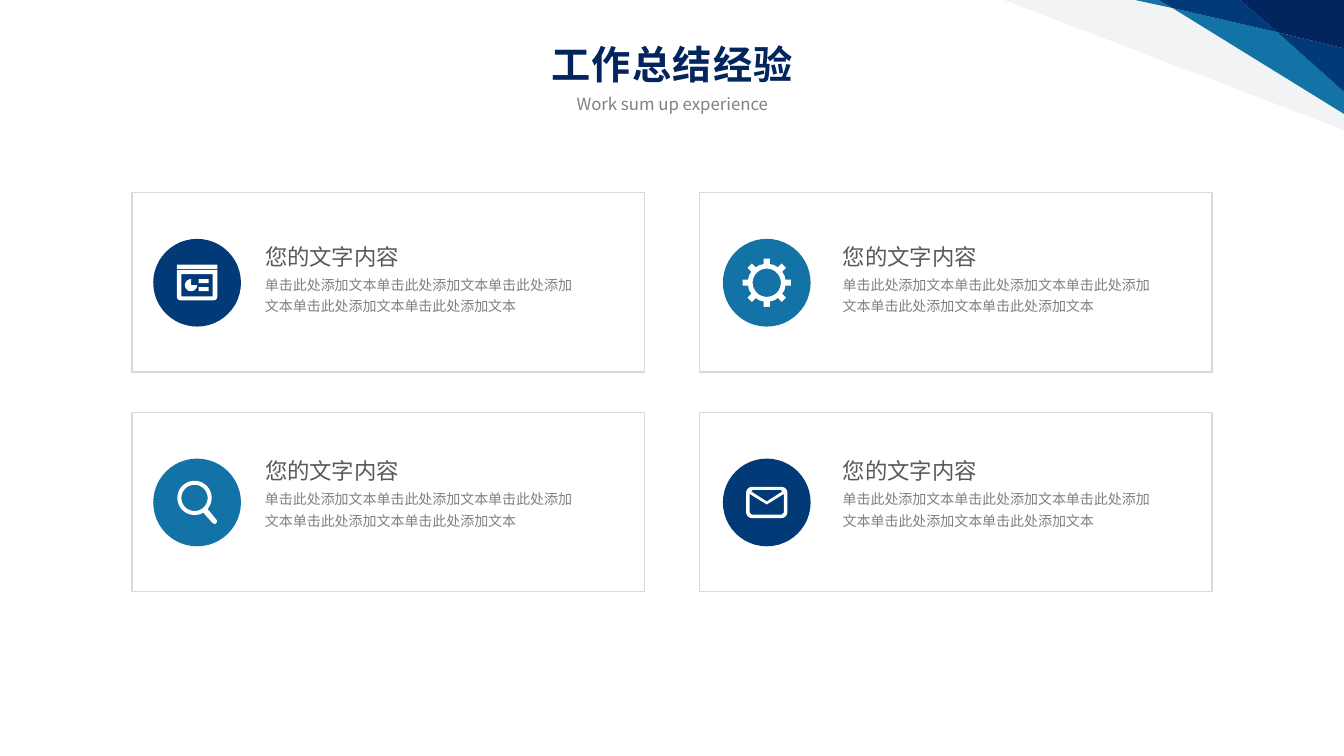
from math import cos, pi, sin

from pptx import Presentation
from pptx import util as u
from pptx.dml.color import RGBColor
from pptx.enum import shapes, text
from pptx.oxml.ns import qn

WHITE = RGBColor(0xFF, 0xFF, 0xFF)
PALE = RGBColor(0xF1, 0xF3, 0xF4)
BORDER = RGBColor(0xD9, 0xD9, 0xD9)
GREY = RGBColor(0x80, 0x80, 0x80)
DARK_GREY = RGBColor(0x59, 0x59, 0x59)
TEAL = RGBColor(0x13, 0x72, 0xA6)
BLUE = RGBColor(0x02, 0x39, 0x77)
NAVY = RGBColor(0x03, 0x25, 0x5D)

COLUMNS, ROWS = 133.3, 75
CELL = u.Inches(0.1)
ICON_UNIT = 0.1

HEADING = "您的文字内容"
BODY = "单击此处添加文本" * 5


class Deck:
    font = "Noto Sans CJK SC"

    def __init__(self):
        self.presentation = Presentation()
        self.presentation.slide_width = int(COLUMNS * CELL)
        self.presentation.slide_height = int(ROWS * CELL)
        self.slide = self.presentation.slides.add_slide(self.presentation.slide_layouts[6])

    def cells(self, *lengths):
        return [int(length * CELL) for length in lengths]

    def paint(self, shape, fill=None, line=None):
        shape.shadow.inherit = False
        if fill is None:
            shape.fill.background()
        else:
            shape.fill.solid()
            shape.fill.fore_color.rgb = fill
        if line is None:
            shape.line.fill.background()
        else:
            shape.line.color.rgb = line
            shape.line.width = u.Pt(1)

    def preset(self, kind, box, **colours):
        shape = self.slide.shapes.add_shape(kind, *self.cells(*box))
        self.paint(shape, **colours)

    def outline(self, contours, fill):
        placed = [[self.cells(*point) for point in contour] for contour in contours]
        builder = self.slide.shapes.build_freeform(*placed[0][0], scale=1.0)
        builder.add_line_segments(placed[0][1:], close=True)
        for contour in placed[1:]:
            builder.move_to(*contour[0])
            builder.add_line_segments(contour[1:], close=True)
        self.paint(builder.convert_to_shape(), fill=fill)

    def icon(self, contours, centre_x, centre_y):
        self.outline(
            [[(centre_x + x * ICON_UNIT, centre_y + y * ICON_UNIT) for x, y in contour]
             for contour in contours], WHITE)

    def label(self, words, box, size, colour, bold=False, tracking=None, **layout):
        frame = self.slide.shapes.add_textbox(*self.cells(*box)).text_frame
        frame.word_wrap = True
        paragraph = frame.paragraphs[0]
        for name, value in layout.items():
            setattr(paragraph, name, value)
        run = paragraph.add_run()
        run.text = words
        for name, value in {"size": u.Pt(size), "bold": bold, "name": self.font}.items():
            setattr(run.font, name, value)
        run.font.color.rgb = colour
        properties = run._r.get_or_add_rPr()
        east_asian = properties.makeelement(qn("a:ea"), {"typeface": self.font})
        properties.find(qn("a:latin")).addnext(east_asian)
        if tracking:
            properties.set("spc", str(tracking))


def arc(x, y, radius, start=0, sweep=360, steps=48):
    angles = [(start + sweep * step / steps) * pi / 180 for step in range(steps + 1)]
    return [(x + radius * cos(angle), y + radius * sin(angle)) for angle in angles]


def rounded(left, top, width, height, upper=0, lower=0):
    right, bottom = left + width, top + height
    corners = [
        (left + upper, top + upper, upper, 180), (right - upper, top + upper, upper, 270),
        (right - lower, bottom - lower, lower, 0), (left + lower, bottom - lower, lower, 90),
    ]
    return [point for x, y, radius, start in corners
            for point in (arc(x, y, radius, start, 90, 6) if radius else [(x, y)])]


def report_icon():
    pie = [(-6, 2.5)] + arc(-6, 2.5, 6, 0, 270)
    return [
        rounded(-20, -18, 40, 4.5), rounded(-20, -12.5, 40, 30, lower=3.5),
        rounded(-15.5, -8.5, 31, 22), pie,
        rounded(1.5, -3.5, 10, 4), rounded(1.5, 4.5, 10, 4),
    ]


def gear_icon():
    rim = []
    for tooth in range(8):
        angle = tooth * pi / 4
        for reach, side in [(18.5, -3), (24, -3), (24, 3), (18.5, 3)]:
            rim.append((reach * cos(angle) - side * sin(angle),
                        reach * sin(angle) + side * cos(angle)))
        rim.append((19 * cos(angle + pi / 8), 19 * sin(angle + pi / 8)))
    return [rim, arc(0, 0, 14)]


def search_icon():
    handle = [(6.5, 10.5), (10.5, 6.5), (19.5, 17.5), (19.8, 19.5), (17.8, 21.5), (15.5, 20.5)]
    return [arc(-2.5, -4.5, 17), arc(-2.5, -4.5, 13), handle]


def mail_icon():
    flap = [(-14, -12.5), (14, -12.5), (15.5, -11), (0, -1), (-15.5, -11)]
    body = [(-17, -8.5), (0, 2), (17, -8.5), (17, 10), (15, 12), (-15, 12), (-17, 10)]
    return [rounded(-20.5, -15.5, 41, 31, upper=6, lower=6), flap, body]


def draw_corner(deck):
    bands = [
        (PALE, [(99.6, 0), (133.3, 12.9), (133.3, 0)]),
        (TEAL, [(112.6, 0), (116.3, 0.8), (114.9, 0)]),
        (TEAL, [(116.3, 0.8), (133.3, 11.3), (133.3, 9.1), (126.7, 3.2)]),
        (BLUE, [(126.7, 3.2), (133.3, 9.1), (133.3, 4.8)]),
        (NAVY, [(123, 0), (126.7, 3.2), (133.3, 4.8), (133.3, 0)]),
        (BLUE, [(114.9, 0), (116.3, 0.8), (126.7, 3.2), (123, 0)]),
    ]
    for colour, points in bands:
        deck.outline([points], colour)


def main():
    deck = Deck()
    draw_corner(deck)
    centred = {"alignment": text.PP_ALIGN.CENTER}
    deck.label("工作总结经验", (0, 3.5, COLUMNS, 5.7), 28, NAVY, True, 100, **centred)
    deck.label("Work sum up experience", (50.4, 8.8, 32.6, 3), 12, GREY, **centred)

    columns = [(13.1, 15.2, 25.3), (69.4, 71.7, 82.6)]
    rows = [(19.1, 23.7, 23.6), (40.9, 45.5, 44.85)]
    icons = [[(report_icon, BLUE), (gear_icon, TEAL)], [(search_icon, TEAL), (mail_icon, BLUE)]]
    disc = 8.7
    for (card_top, disc_top, text_top), row_icons in zip(rows, icons):
        for (card_left, disc_left, text_left), (icon, colour) in zip(columns, row_icons):
            deck.preset(shapes.MSO_SHAPE.RECTANGLE, (card_left, card_top, 50.8, 17.8), line=BORDER)
            deck.preset(shapes.MSO_SHAPE.OVAL, (disc_left, disc_top, disc, disc), fill=colour)
            deck.icon(icon(), disc_left + disc / 2, disc_top + disc / 2)
            deck.label(BODY, (text_left, text_top + 2.9, 32.6, 7.5), 10, GREY, line_spacing=1.27)
            deck.label(HEADING, (text_left, text_top, 30.8, 3.7), 16, DARK_GREY)
    deck.presentation.save("out.pptx")


if __name__ == "__main__":
    main()
